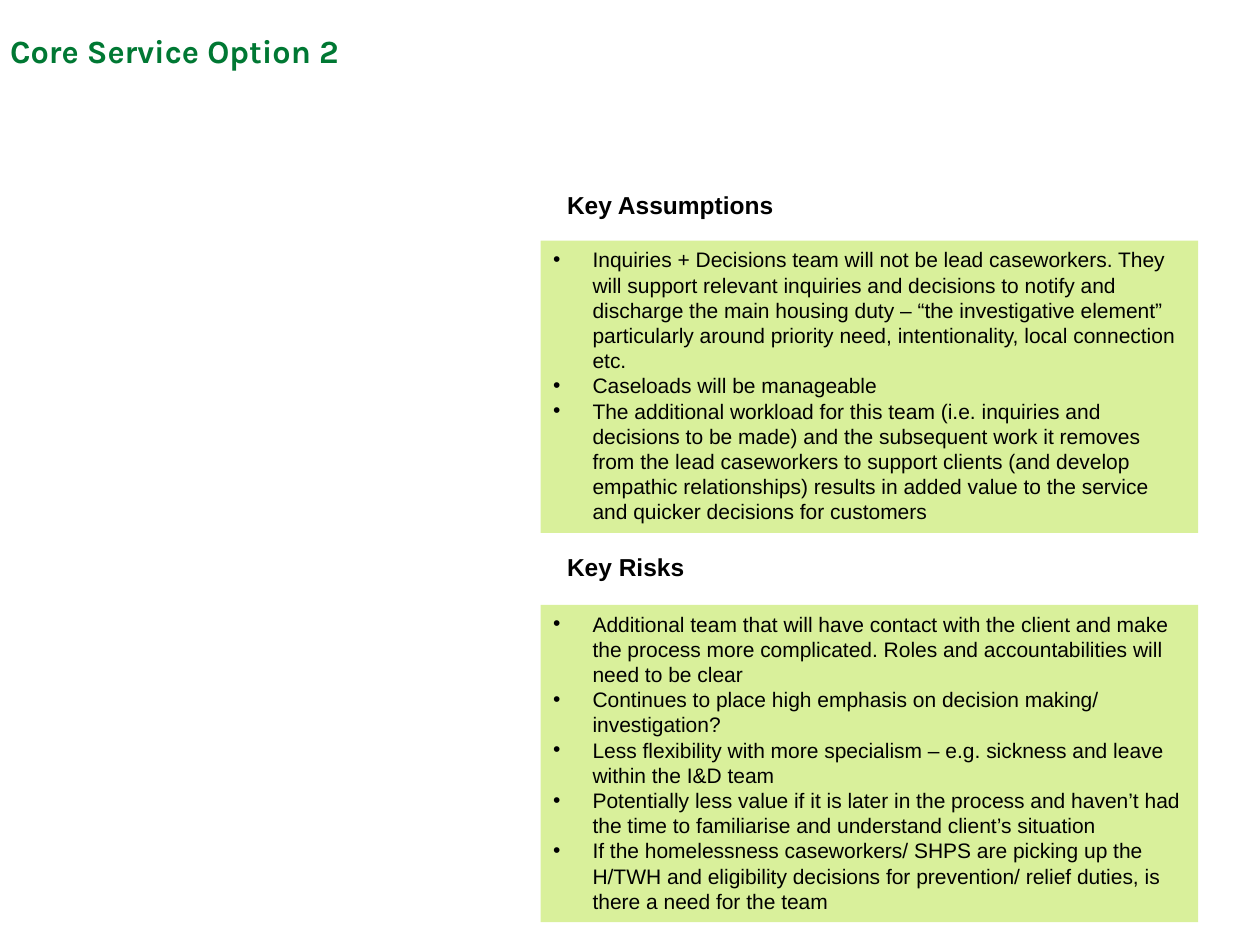
"""Build the Core Service Option 2 slide with its assumptions and risks."""
from pptx import Presentation
from pptx.dml.color import RGBColor
from pptx.enum.text import MSO_ANCHOR, MSO_AUTO_SIZE, PP_ALIGN
from pptx.util import Pt
from lxml.etree import SubElement
from pptx.oxml.ns import qn

HUES = {"title": "007833", "text": "000000", "panel": "D9F09B"}

TASKS = [
    "Inquiries + Decisions team will not be lead caseworkers. They will support relevant inquiries and decisions to notify and discharge the main housing duty – “the investigative element” particularly around priority need, intentionality, local connection etc.",
    "Caseloads will be manageable",
    "The additional workload for this team (i.e. inquiries and decisions to be made) and the subsequent work it removes from the lead caseworkers to support clients (and develop empathic relationships) results in added value to the service and quicker decisions for customers",
]
RISKS = [
    "Additional team that will have contact with the client and make the process more complicated. Roles and accountabilities will need to be clear",
    "Continues to place high emphasis on decision making/ investigation?",
    "Less flexibility with more specialism – e.g. sickness and leave within the I&D team",
    "Potentially less value if it is later in the process and haven’t had the time to familiarise and understand client’s situation",
    "If the homelessness caseworkers/ SHPS are picking up the H/TWH and eligibility decisions for prevention/ relief duties, is there a need for the team",
]


def place(shape, left, top, width, height):
    """Set the shape's box in points."""
    shape.left, shape.top = Pt(left), Pt(top)
    shape.width, shape.height = Pt(width), Pt(height)


def write(shape, lines, size, face="Arial", hue="text", bold=False):
    """Fill the shape with one plain paragraph per line."""
    frame = shape.text_frame
    frame.text = "\n".join(lines)
    frame.word_wrap = True
    frame.auto_size = MSO_AUTO_SIZE.NONE
    frame.vertical_anchor = MSO_ANCHOR.TOP
    for para in frame.paragraphs:
        para.alignment = PP_ALIGN.LEFT
        para.space_before = Pt(0)
        font = para.font
        font.name, font.size, font.bold = face, Pt(size), bold
        font.color.rgb = RGBColor.from_string(HUES[hue])


def add_title(shape, text):
    """Set the slide title with no margins."""
    place(shape, 5.8, 19.4, 507.6, 21.6)
    write(shape, [text], 18.5, "Karla", "title", True)
    frame = shape.text_frame
    frame.margin_left = frame.margin_right = Pt(0)
    frame.margin_top = frame.margin_bottom = Pt(0)
    frame.paragraphs[0].line_spacing = 0.95


def add_head(shape, text, top):
    """Set a bold section heading."""
    place(shape, 316.8, top, 245.5, 24.5)
    write(shape, [text], 14, bold=True)


def add_list(shape, lines, top, height):
    """Set a bulleted list on a green panel."""
    place(shape, 308.9, top, 375.8, height)
    shape.fill.solid()
    shape.fill.fore_color.rgb = RGBColor.from_string(HUES["panel"])
    write(shape, lines, 12)
    for para in shape.text_frame.paragraphs:
        props = para._p.get_or_add_pPr()
        props.set("marL", str(Pt(22.5)))
        props.set("indent", str(Pt(-22.5)))
        mark = SubElement(props, qn("a:buChar"), char="•")
        props.find(qn("a:defRPr")).addprevious(mark)


def main():
    """Build and save the slide."""
    deck = Presentation()
    deck.slide_width, deck.slide_height = Pt(720), Pt(540)
    slide = deck.slides.add_slide(deck.slide_layouts[4])
    title, head_a, list_a, head_b, list_b = list(slide.placeholders)[:5]
    add_title(title, "Core Service Option 2")
    add_head(head_a, "Key Assumptions", 105.1)
    add_list(list_a, TASKS, 137.5, 167)
    add_head(head_b, "Key Risks", 311.8)
    add_list(list_b, RISKS, 345.6, 181.4)
    deck.save("out.pptx")


if __name__ == "__main__":
    main()
